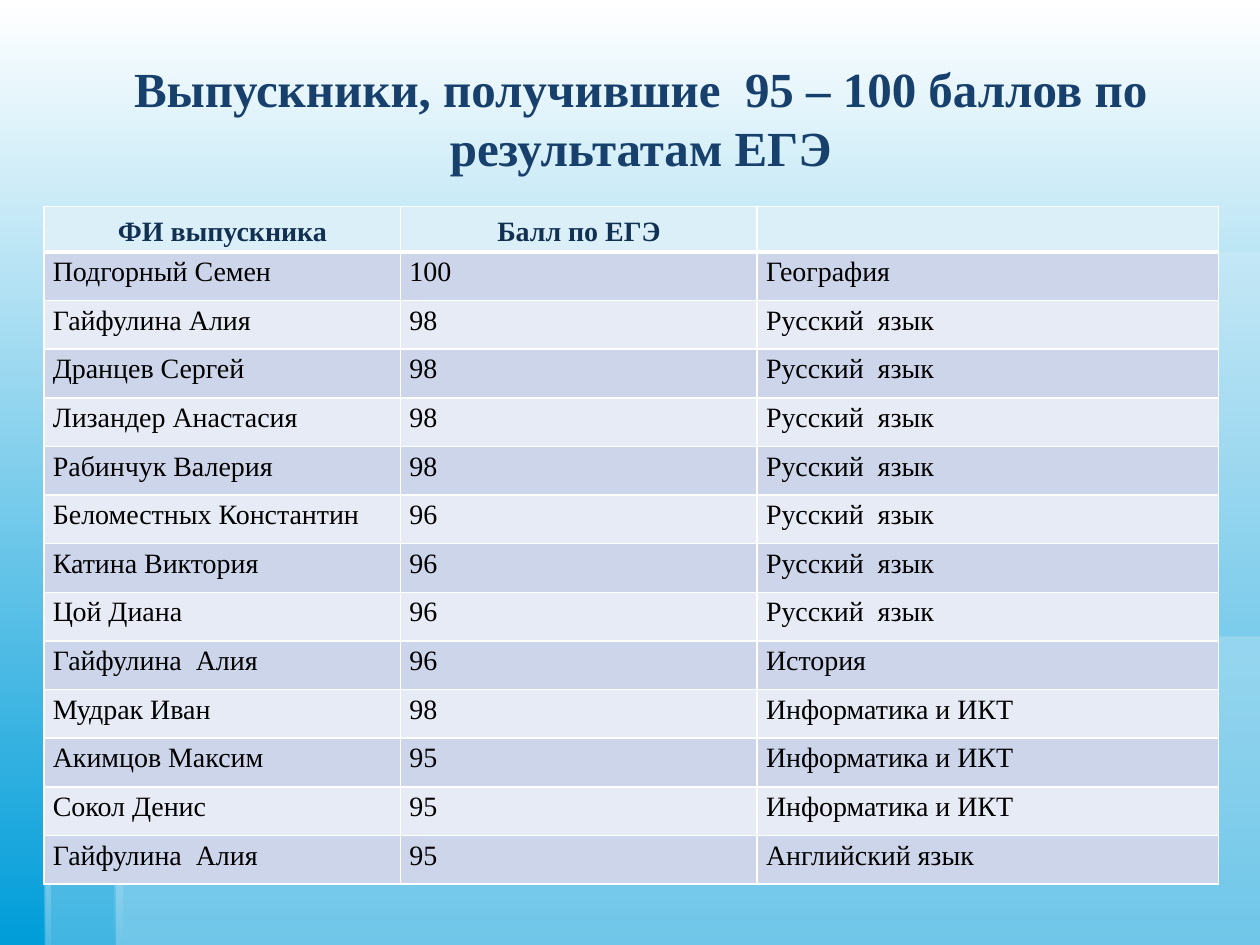
"""Build a slide that lists graduates with the highest exam scores."""
from lxml.etree import SubElement
from pptx import Presentation
from pptx.dml.color import RGBColor
from pptx.enum.text import MSO_ANCHOR as Anchor, PP_ALIGN as Align
from pptx.oxml.ns import qn
from pptx.util import Inches, Pt

COLORS = {
    "white": "FFFFFF", "sky": "009DD9", "pale": "DBEFF9", "frost": "E0F1FA",
    "steel": "C9DBE4", "title": "17406D", "header": "113052", "text": "000000",
    "odd": "CCD5EA", "even": "E7EBF5",
}
FONT = "Times New Roman"
WIDTH, HEIGHT = 10, 7.5
TITLE = "Выпускники, получившие  95 – 100 баллов по результатам ЕГЭ"
HEADER = ("ФИ выпускника", "Балл по ЕГЭ", "")
RUSSIAN, COMPUTING = "Русский  язык", "Информатика и ИКТ"
GRADUATES = [
    ("Подгорный Семен", "100", "География"),
    ("Гайфулина Алия", "98", RUSSIAN),
    ("Дранцев Сергей", "98", RUSSIAN),
    ("Лизандер Анастасия", "98", RUSSIAN),
    ("Рабинчук Валерия", "98", RUSSIAN),
    ("Беломестных Константин", "96", RUSSIAN),
    ("Катина Виктория", "96", RUSSIAN),
    ("Цой Диана", "96", RUSSIAN),
    ("Гайфулина  Алия", "96", "История"),
    ("Мудрак Иван", "98", COMPUTING),
    ("Акимцов Максим", "95", COMPUTING),
    ("Сокол Денис", "95", COMPUTING),
    ("Гайфулина  Алия", "95", "Английский язык"),
]
TABLE_BOX = (0.35, 1.64, 9.32, 5.38)
COLUMN_WIDTHS = (2.83, 2.83, 3.66)
HEADER_HEIGHT = 0.36

PANELS = [
    [(0.92, 5.05), (0.92, HEIGHT), (WIDTH, HEIGHT), (WIDTH, 5.05)],
    [(0.94, 5.06), (0.36, 5.06), (0.36, HEIGHT), (WIDTH, HEIGHT), (WIDTH, 2), (0.94, 2)],
]
ACROSS, DOWN = 0, 270
STRIPS = [
    ([(0.92, 2), (0.92, 2.05), (8.91, 2.05), (8.91, 2)],
     ACROSS, ("pale", 0), ("steel", 100)),
    ([(0.92, 2), (0.92, 5.1), (0.97, 5.1), (0.96, 2.04)],
     DOWN, ("frost", 100), ("pale", 100)),
    ([(0.91, HEIGHT), (0.97, HEIGHT), (0.96, 5.08), (0.91, 5.04)],
     DOWN, ("frost", 100), ("pale", 0)),
    ([(0.35, 5.04), (0.35, 5.09), (5.35, 5.09), (5.35, 5.04)],
     ACROSS, ("pale", 0), ("steel", 100)),
    ([(0.35, 5.04), (0.35, HEIGHT), (0.4, HEIGHT), (0.4, 5.09)],
     DOWN, ("frost", 100), ("pale", 10)),
]


def rgb(name):
    return RGBColor.from_string(COLORS[name])


def apply(target, values):
    for name, value in values.items():
        setattr(target, name, value)


def set_opacity(element, percents):
    for color, percent in zip(element.iter(qn("a:srgbClr")), percents):
        if percent < 100:
            SubElement(color, qn("a:alpha"), val=str(percent * 1000))


def set_gradient(fill, angle, names):
    fill.gradient()
    fill.gradient_angle = angle
    for stop, name, position in zip(fill.gradient_stops, names, (0, 1)):
        stop.color.rgb = rgb(name)
        stop.position = position


def add_outline(slide, points):
    start, *rest = [(Inches(x), Inches(y)) for x, y in points]
    builder = slide.shapes.build_freeform(*start)
    builder.add_line_segments(rest, close=True)
    shape = builder.convert_to_shape()
    shape.shadow.inherit = False
    shape.line.fill.background()
    return shape


def add_backdrop(slide):
    set_gradient(slide.background.fill, DOWN, ("white", "sky"))
    for points in PANELS:
        panel = add_outline(slide, points)
        panel.fill.solid()
        panel.fill.fore_color.rgb = rgb("pale")
        set_opacity(panel.fill._xPr, [30])
    for points, angle, *stops in STRIPS:
        strip = add_outline(slide, points)
        names, opacities = zip(*stops)
        set_gradient(strip.fill, angle, names)
        set_opacity(strip.fill._xPr, opacities)


def write(paragraph, text, size, color, bold, **layout):
    apply(paragraph, layout)
    if text:
        run = paragraph.add_run()
        run.text = text
        apply(run.font, {"name": FONT, "size": Pt(size), "bold": bold})
        run.font.color.rgb = rgb(color)


def add_title(slide):
    box = slide.shapes.add_textbox(*map(Inches, (0.5, 0.27, 9.17, 1.32)))
    apply(box.text_frame, {"word_wrap": True, "vertical_anchor": Anchor.MIDDLE})
    write(box.text_frame.paragraphs[0], TITLE, 28, "title", True, alignment=Align.CENTER)


def set_borders(cell, widths):
    properties = cell._tc.get_or_add_tcPr()
    for side, width in widths.items():
        line = SubElement(properties, qn("a:ln" + side), w=str(Pt(width)))
        fill = SubElement(line, qn("a:solidFill"))
        SubElement(fill, qn("a:srgbClr"), val=COLORS["white"])


def add_table(slide):
    rows = [HEADER, *GRADUATES]
    frame = slide.shapes.add_table(len(rows), len(HEADER), *map(Inches, TABLE_BOX))
    table = frame.table
    apply(table, {"first_row": False, "horz_banding": False})
    for column, width in zip(table.columns, COLUMN_WIDTHS):
        column.width = Inches(width)
    body_height = (TABLE_BOX[3] - HEADER_HEIGHT) / len(GRADUATES)
    margins = {"margin_left": Inches(0.07), "margin_right": Inches(0.07),
               "margin_top": 0, "margin_bottom": 0}
    for r, texts in enumerate(rows):
        is_header = r == 0
        table.rows[r].height = Inches(HEADER_HEIGHT if is_header else body_height)
        for c, text in enumerate(texts):
            cell = table.cell(r, c)
            apply(cell, margins)
            cell.vertical_anchor = Anchor.MIDDLE if is_header else Anchor.TOP
            set_borders(cell, {"L": 1, "R": 1, "T": 3 if r == 1 else 1,
                               "B": 3 if is_header else 1})
            cell.fill.solid()
            cell.fill.fore_color.rgb = rgb("pale" if is_header else ("even", "odd")[r % 2])
            body_alignment = Align.JUSTIFY if c == 0 else Align.LEFT
            write(cell.text_frame.paragraphs[0], text, 16,
                  "header" if is_header else "text", is_header,
                  alignment=Align.CENTER if is_header else body_alignment,
                  line_spacing=1.15,
                  space_after=Pt(10 if is_header or c else 0))


def main():
    presentation = Presentation()
    apply(presentation, {"slide_width": Inches(WIDTH), "slide_height": Inches(HEIGHT)})
    slide = presentation.slides.add_slide(presentation.slide_layouts[6])
    add_backdrop(slide)
    add_title(slide)
    add_table(slide)
    presentation.save("out.pptx")


if __name__ == "__main__":
    main()
